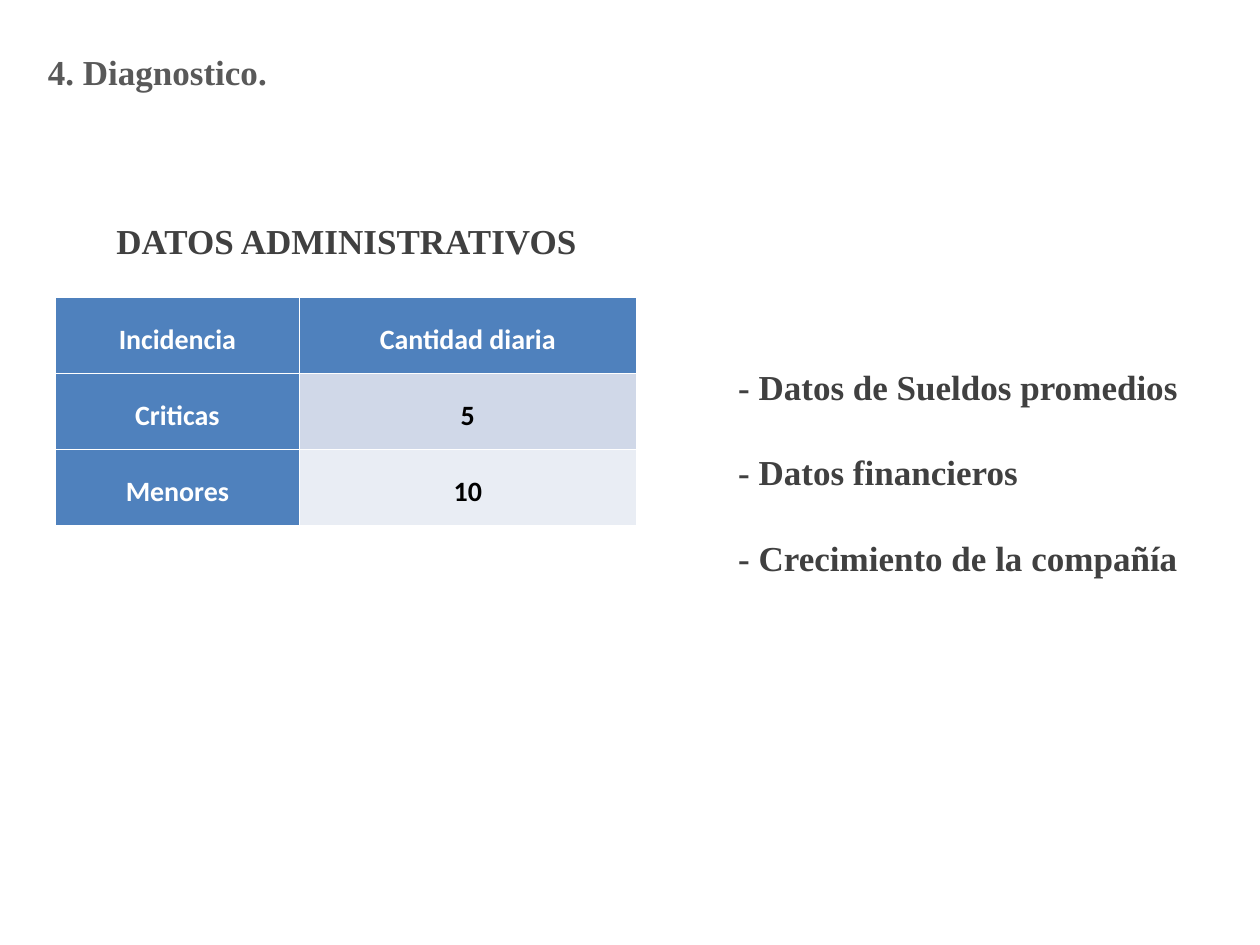
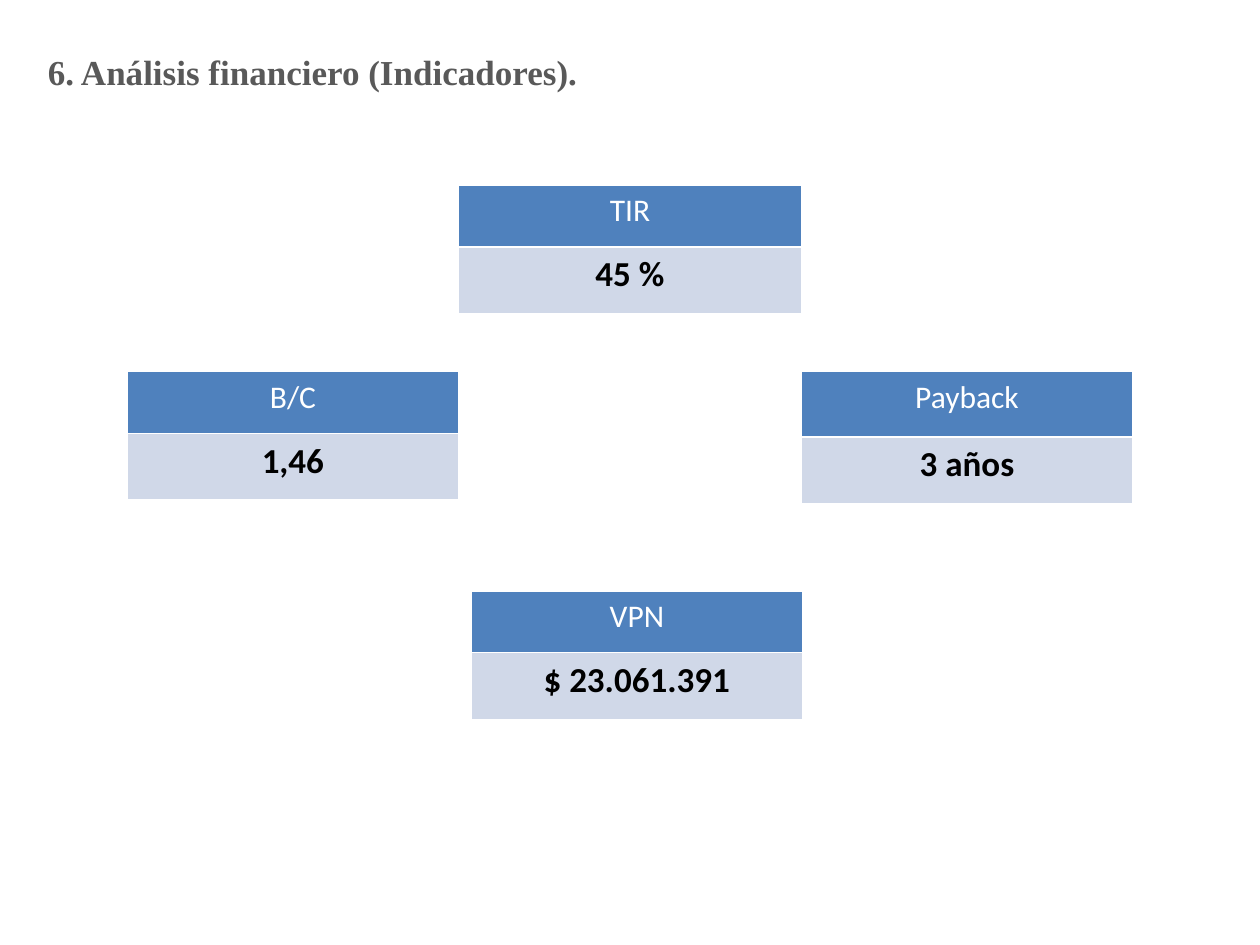
from dataclasses import dataclass
from lxml import etree
from pptx import Presentation
from pptx import util as u
from pptx.dml.color import RGBColor
from pptx.enum import text
from pptx.oxml.ns import qn


@dataclass(frozen=True)
class Theme:
    serif: str = "Times New Roman"
    sans: str = "Calibri"
    title_gray: str = "595959"
    text_gray: str = "404040"
    blue: str = "4F81BD"
    band_dark: str = "D0D8E8"
    band_light: str = "E9EDF4"
    white: str = "FFFFFF"
    black: str = "000000"
    heading_size: int = 20
    label_size: int = 18
    cell_size: int = 16
    list_gap: int = 25


@dataclass(frozen=True)
class Box:
    left: float
    top: float
    width: float
    height: float

    def emu(self):
        return [grid(n) for n in (self.left, self.top, self.width, self.height)]


THEME = Theme()
COLUMNS, ROWS = 100, 75
SLIDE_WIDTH = u.Inches(10)
SLIDE_HEIGHT = SLIDE_WIDTH * ROWS // COLUMNS
TITLE_BOX = Box(2.8, 1.3, 44.1, 8.7)
CENTER, LEFT = text.PP_ALIGN.CENTER, text.PP_ALIGN.LEFT
MIDDLE, TOP = text.MSO_ANCHOR.MIDDLE, text.MSO_ANCHOR.TOP


def grid(count):
    return u.Emu(round(SLIDE_WIDTH * count / COLUMNS))


def style_para(para, font, size, color, bold=True, align=LEFT):
    para.alignment = align
    for span in para.runs:
        span.font.name = font
        span.font.size = u.Pt(size)
        span.font.bold = bold
        span.font.color.rgb = RGBColor.from_string(color)


def write_lines(shape, lines, color, align=LEFT, gap=0):
    frame = shape.text_frame
    frame.text = "\n".join(lines)
    frame.word_wrap = True
    frame.auto_size = text.MSO_AUTO_SIZE.NONE
    frame.vertical_anchor = MIDDLE
    for index, para in enumerate(frame.paragraphs):
        style_para(para, THEME.serif, THEME.heading_size, color, align=align)
        if index:
            para.space_before = u.Pt(gap)


def add_text(page, box, lines, **options):
    shape = page.shapes.add_textbox(*box.emu())
    write_lines(shape, lines, THEME.text_gray, **options)


def add_page(deck, title):
    page = deck.slides.add_slide(deck.slide_layouts[5])
    shape = page.shapes.title
    shape.left, shape.top, shape.width, shape.height = TITLE_BOX.emu()
    write_lines(shape, [title], THEME.title_gray)
    shape.text_frame.word_wrap = False
    return page


def add_borders(cell):
    properties = cell._tc.get_or_add_tcPr()
    for index, side in enumerate("LRTB"):
        line = etree.Element(qn(f"a:ln{side}"), w=str(u.Pt(1)))
        fill = etree.SubElement(line, qn("a:solidFill"))
        etree.SubElement(fill, qn("a:srgbClr"), val=THEME.white)
        properties.insert(index, line)


def fill_cell(cell, words, fill, color, size, bold=True, anchor=TOP):
    cell.text = words
    cell.fill.solid()
    cell.fill.fore_color.rgb = RGBColor.from_string(fill)
    cell.vertical_anchor = anchor
    style_para(cell.text_frame.paragraphs[0], THEME.sans, size, color, bold, CENTER)
    add_borders(cell)


def add_grid_table(page, box, widths, heights):
    table = page.shapes.add_table(len(heights), len(widths), *box.emu()).table
    table.first_row = table.horz_banding = False
    for column, width in zip(table.columns, widths):
        column.width = grid(width)
    for row, height in zip(table.rows, heights):
        row.height = grid(height)
    return table


def add_incident_table(page, box, rows):
    first = box.width * 0.42
    table = add_grid_table(page, box, [first, box.width - first],
                           [box.height / len(rows)] * len(rows))
    bands = [THEME.band_light, THEME.band_dark]
    for r, row in enumerate(rows):
        for c, words in enumerate(row):
            header = r == 0 or c == 0
            cell = table.cell(r, c)
            fill_cell(cell, words, THEME.blue if header else bands[r % 2],
                      THEME.white if header else THEME.black,
                      THEME.cell_size, anchor=MIDDLE)
            cell.margin_left = cell.margin_right = grid(0.7)
            cell.margin_top = cell.margin_bottom = 0
            cell.text_frame.paragraphs[0].line_spacing = 1.25


def add_indicator(page, box, label, value):
    value_height = 5.3
    table = add_grid_table(page, box, [box.width],
                           [box.height - value_height, value_height])
    fill_cell(table.cell(0, 0), label, THEME.blue, THEME.white,
              THEME.label_size, bold=False)
    fill_cell(table.cell(1, 0), value, THEME.band_dark, THEME.black,
              THEME.heading_size)


def add_indicator_ring(page, box):
    side, height = 26.3, 10.2
    inner_left = box.left + side
    inner_right = box.left + box.width - side
    middle = box.top + 14.8
    bottom = box.top + box.height - height
    indicators = [
        (Box(inner_left, box.top, inner_right - inner_left, height), "TIR", "45 %"),
        (Box(inner_right - side + 0.1, bottom, side, height), "VPN", "$ 23.061.391"),
        (Box(inner_right, middle, side, height + 0.3), "Payback", "3 años"),
        (Box(box.left, middle, side, height), "B/C", "1,46"),
    ]
    for place, label, value in indicators:
        add_indicator(page, place, label, value)


def build_diagnosis(deck):
    page = add_page(deck, "4. Diagnostico.")
    add_text(page, Box(8.2, 14.6, 38.6, 9), ["DATOS ADMINISTRATIVOS"], align=CENTER)
    add_text(page, Box(57.6, 27.5, 37.2, 19.9),
             ["- Datos de Sueldos promedios", "- Datos financieros",
              "- Crecimiento de la compañía"], gap=THEME.list_gap)
    add_incident_table(page, Box(4.4, 23.6, 46.1, 18.1),
                       [("Incidencia", "Cantidad diaria"),
                        ("Criticas", "5"), ("Menores", "10")])


def build_indicators(deck):
    page = add_page(deck, "6. Análisis financiero (Indicadores).")
    add_indicator_ring(page, Box(10.1, 14.7, 79.8, 42.4))


def main():
    deck = Presentation()
    deck.slide_width, deck.slide_height = SLIDE_WIDTH, SLIDE_HEIGHT
    build_diagnosis(deck)
    build_indicators(deck)
    deck.save("out.pptx")


if __name__ == "__main__":
    main()
